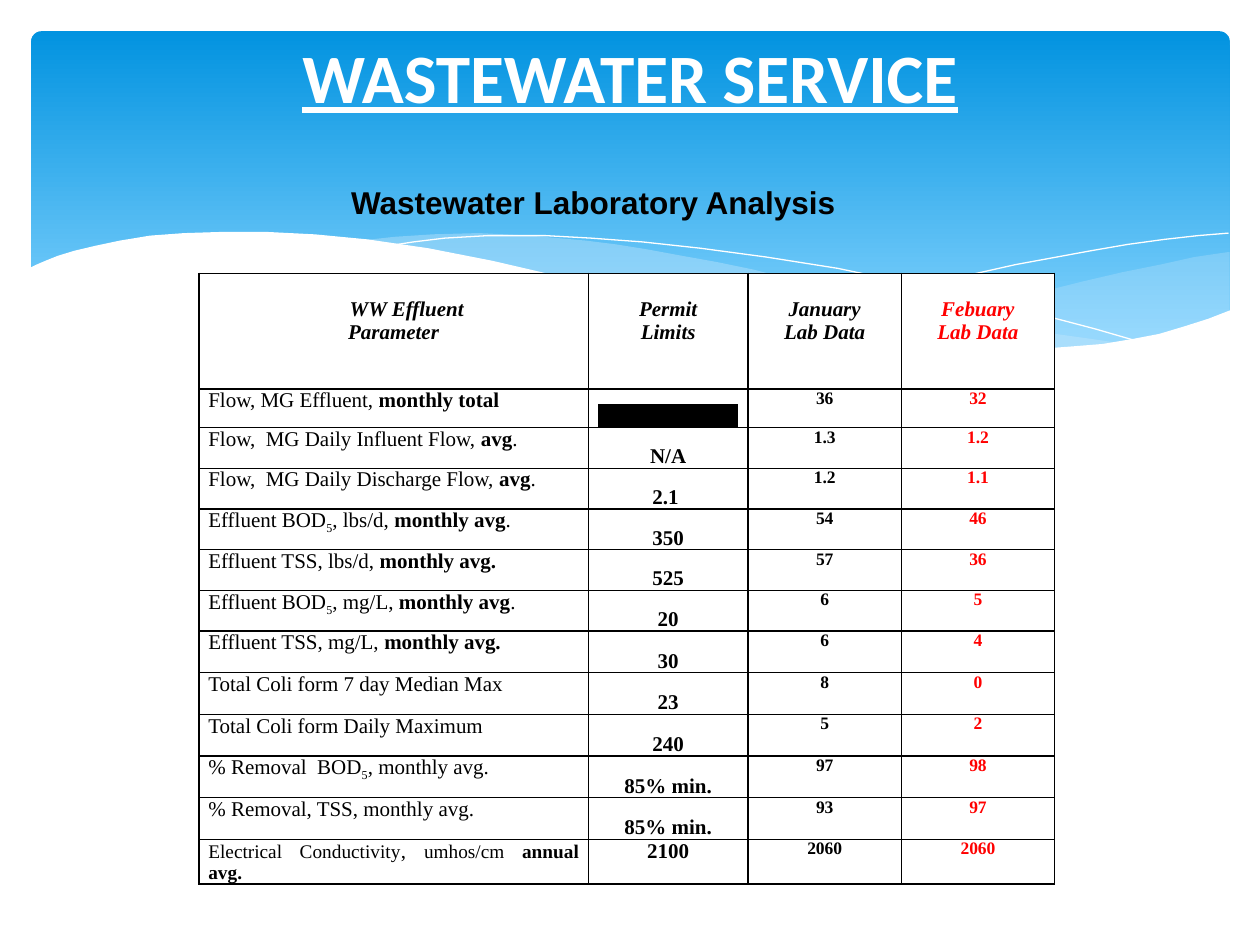
from lxml import etree
from pptx import Presentation
from pptx import util as u
from pptx.dml.color import RGBColor
from pptx.enum import shapes, text
from pptx.oxml.ns import qn

WHITE = RGBColor(0xFF, 0xFF, 0xFF)
BLACK = RGBColor(0x00, 0x00, 0x00)
RED = RGBColor(0xFF, 0x00, 0x00)
SKY_TOP = RGBColor(0x02, 0x93, 0xE0)
SKY_BOTTOM = RGBColor(0x83, 0xD3, 0xFE)
PALE_BLUE = RGBColor(0xC6, 0xE7, 0xFC)

CENTER, JUSTIFY = text.PP_ALIGN.CENTER, text.PP_ALIGN.JUSTIFY
TOP, BOTTOM = text.MSO_ANCHOR.TOP, text.MSO_ANCHOR.BOTTOM

# Wave outlines in hundredths of an inch
RIGHT_WAVE = [
    (975, 200), (948, 204), (921, 210), (891, 216), (861, 223), (805, 237),
    (753, 248), (706, 257), (661, 265), (691, 269), (719, 272), (745, 275),
    (769, 277), (803, 278), (835, 277), (863, 275), (889, 272), (913, 267),
    (935, 262), (949, 257), (963, 252), (976, 247), (976, 200)]
MIDDLE_WAVE = [
    (893, 273), (866, 269), (837, 265), (807, 260), (775, 254), (741, 247),
    (706, 240), (668, 231), (629, 222), (598, 214), (569, 208), (541, 203),
    (514, 198), (489, 194), (465, 191), (420, 187), (380, 185), (344, 186),
    (313, 188), (286, 191), (323, 196), (362, 203), (404, 211), (449, 222),
    (491, 232), (530, 240), (566, 248), (601, 255), (634, 261), (665, 266),
    (695, 270), (722, 274), (748, 276), (785, 278), (828, 278), (867, 276)]
FALLING_LINE = [
    (309, 195), (328, 192), (353, 189), (387, 187), (433, 187), (469, 189),
    (510, 192), (556, 197), (608, 204), (665, 213), (727, 226), (795, 241),
    (831, 251), (869, 261), (907, 272)]
RISING_LINE = [
    (613, 257), (653, 246), (695, 235), (748, 223), (806, 210), (866, 199),
    (895, 194), (924, 190), (951, 187), (975, 185)]
WHITE_WAVE = [
    (977, 246), (959, 253), (940, 259), (920, 265), (899, 269), (875, 273),
    (850, 275), (823, 277), (793, 276), (761, 275), (726, 272), (688, 268),
    (648, 262), (603, 254), (555, 245), (503, 233), (447, 220), (391, 207),
    (340, 197), (292, 190), (250, 186), (211, 184), (177, 184), (146, 185),
    (119, 187), (95, 191), (76, 195), (59, 199), (46, 203), (36, 207),
    (29, 210), (23, 213), (23, 329), (977, 329)]

PLAIN, BOLD, SUBSCRIPT = {}, {"bold": True}, {"baseline": -25000}
SMALL = {"size": u.Pt(11)}
AVERAGE = [("monthly avg", BOLD), (".", PLAIN)]


def bod(lead, unit):
    return [(lead + "BOD", PLAIN), ("5", SUBSCRIPT), (unit, PLAIN)]


# Label spans, permit limit, January, February
RESULTS = [
    ([("Flow, MG Effluent, ", PLAIN), ("monthly total", BOLD)], "-" * 20, "36", "32"),
    ([("Flow,  MG Daily Influent Flow, ", PLAIN), ("avg", BOLD), (".", PLAIN)],
     "N/A", "1.3", "1.2"),
    ([("Flow,  MG Daily Discharge Flow, ", PLAIN), ("avg", BOLD), (". ", PLAIN)],
     "2.1 ", "1.2", "1.1"),
    (bod("Effluent ", ", lbs/d, ") + AVERAGE, "350", "54", "46"),
    ([("Effluent TSS, lbs/d, ", PLAIN), ("monthly avg.", BOLD)], "525", "57", "36"),
    (bod("Effluent ", ", mg/L, ") + AVERAGE, "20", "6", "5"),
    ([("Effluent TSS, mg/L, ", PLAIN), ("monthly avg.", BOLD)], "30", "6", "4"),
    ([("Total Coli form 7 day Median Max", PLAIN)], "23", "8", "0"),
    ([("Total Coli form Daily Maximum", PLAIN)], "240", "5", "2"),
    (bod("% Removal  ", ", monthly avg."), "85% min.", "97", "98"),
    ([("% Removal, TSS, monthly avg.", PLAIN)], "85% min.", "93", "97"),
    ([("Electrical Conductivity", SMALL), (", ", PLAIN), ("umhos/cm ", SMALL),
      ("annual avg.", {**SMALL, **BOLD})], "2100", "2060", "2060"),
]
HEADINGS = [("WW Effluent", "Parameter"), ("Permit", "Limits"),
            ("January", "Lab Data"), ("Febuary", "Lab Data")]
COLUMN_WIDTHS = [7.85, 3.22, 3.09, 3.09]
ROW_HEIGHTS = [2.33, 0.78] + [0.82] * 5 + [0.84] * 6


def set_all(target, values):
    for name, value in values.items():
        setattr(target, name, value)


def add_span(para, words, color=BLACK, baseline=None, **font):
    span = para.add_run()
    span.text = words
    set_all(span.font, font)
    span.font.color.rgb = color
    if baseline:
        span.font._element.set("baseline", str(baseline))
    return span


def highlight(span, color):
    mark = etree.Element(qn("a:highlight"))
    etree.SubElement(mark, qn("a:srgbClr"), val=str(color))
    span.font._element.find(qn("a:solidFill")).addnext(mark)


def add_wave(slide, points, fill=None, opacity=100):
    """Draw a filled wave, or an open white hairline when no fill is given."""
    builder = slide.shapes.build_freeform(*points[0], scale=u.Cm(2.54) / 100)
    builder.add_line_segments(points[1:], close=fill is not None)
    wave = builder.convert_to_shape()
    wave.shadow.inherit = False
    if fill is None:
        wave.fill.background()
        wave.line.color.rgb = WHITE
        wave.line.width = u.Cm(0)
        return
    wave.fill.solid()
    wave.fill.fore_color.rgb = fill
    wave.line.fill.background()
    if opacity < 100:
        color = next(wave.element.spPr.iter(qn("a:srgbClr")))
        etree.SubElement(color, qn("a:alpha"), val=str(opacity * 1000))


def add_sky(slide):
    sky = slide.shapes.add_shape(shapes.MSO_SHAPE.ROUNDED_RECTANGLE,
                                 u.Cm(0.63), u.Cm(0.63), u.Cm(24.16), u.Cm(6.86))
    sky.adjustments[0] = 0.03
    sky.shadow.inherit = False
    sky.line.fill.background()
    sky.fill.gradient()
    sky.fill.gradient_angle = 270
    for stop, color, place in zip(sky.fill.gradient_stops, (SKY_TOP, SKY_BOTTOM), (0, 0.9)):
        stop.color.rgb = color
        stop.position = place


def format_cell(cell, anchor=TOP, margin_top=0):
    set_all(cell, {"vertical_anchor": anchor, "margin_left": u.Cm(0.19),
                   "margin_right": u.Cm(0.19), "margin_top": u.Cm(margin_top),
                   "margin_bottom": 0})
    properties = cell._tc.get_or_add_tcPr()
    for side in ("lnL", "lnR", "lnT", "lnB"):
        border = etree.SubElement(properties, qn("a:" + side), w=str(u.Pt(1)))
        paint = etree.SubElement(border, qn("a:solidFill"))
        etree.SubElement(paint, qn("a:srgbClr"), val=str(BLACK))
    cell.fill.solid()
    cell.fill.fore_color.rgb = WHITE


def fill_cell(cell, lines, align=CENTER, color=BLACK, **font):
    """Write lines, each a list of (words, style) spans, into a cell."""
    frame = cell.text_frame
    for index, spans in enumerate(lines):
        para = frame.add_paragraph() if index else frame.paragraphs[0]
        para.alignment = align
        for words, style in spans:
            add_span(para, words, color, **{"name": "Times New Roman", **font, **style})


def add_results_table(slide):
    table = slide.shapes.add_table(len(ROW_HEIGHTS), len(COLUMN_WIDTHS), u.Cm(4.01), u.Cm(5.51),
                                   u.Cm(sum(COLUMN_WIDTHS)), u.Cm(sum(ROW_HEIGHTS))).table
    for column, width in zip(table.columns, COLUMN_WIDTHS):
        column.width = u.Cm(width)
    for row, height in zip(table.rows, ROW_HEIGHTS):
        row.height = u.Cm(height)

    colors = (BLACK, BLACK, BLACK, RED)
    for index, (lines, color) in enumerate(zip(HEADINGS, colors)):
        cell = table.cell(0, index)
        format_cell(cell, margin_top=0.49)
        fill_cell(cell, [[(line, PLAIN)] for line in lines], color=color,
                  size=u.Pt(12), bold=True, italic=True)
    first = table.cell(0, 0).text_frame.paragraphs[0]
    first._p.get_or_add_pPr().set("marL", str(u.Cm(0.53)))

    for number, (label, *values) in enumerate(RESULTS, start=1):
        cell = table.cell(number, 0)
        format_cell(cell)
        fill_cell(cell, [label], JUSTIFY, size=u.Pt(12), bold=False)
        for index, value in enumerate(values, start=1):
            cell = table.cell(number, index)
            is_limit = index == 1
            format_cell(cell, BOTTOM if is_limit and number < len(RESULTS) else TOP)
            fill_cell(cell, [[(value, BOLD)]], color=colors[index],
                      size=u.Pt(12 if is_limit else 10))
    highlight(table.cell(1, 1).text_frame.paragraphs[0].runs[0], BLACK)


def format_title(slide):
    title = slide.shapes.title
    title.element.getparent().append(title.element)  # in front of the waves
    set_all(title, {"left": u.Cm(1.27), "top": u.Cm(0.94),
                    "width": u.Cm(22.86), "height": u.Cm(2.87)})
    set_all(title.text_frame, {"vertical_anchor": text.MSO_ANCHOR.MIDDLE, "word_wrap": True,
                               "auto_size": text.MSO_AUTO_SIZE.NONE,
                               "margin_bottom": u.Cm(1.83)})
    para = title.text_frame.paragraphs[0]
    para.alignment = CENTER
    add_span(para, "WASTEWATER SERVICE", WHITE, name="Calibri", size=u.Pt(39.6),
             bold=True, underline=True)


def add_subtitle(slide):
    box = slide.shapes.add_textbox(u.Cm(5.94), u.Cm(3.56), u.Cm(15.04), u.Cm(1.02))
    box.text_frame.word_wrap = True
    para = box.text_frame.paragraphs[0]
    para._p.get_or_add_pPr().set("indent", str(u.Cm(0.89)))
    add_span(para, "Wastewater Laboratory Analysis", name="Arial", size=u.Pt(18), bold=True)


def main():
    deck = Presentation()
    set_all(deck, {"slide_width": u.Cm(25.4), "slide_height": u.Cm(19.05)})
    slide = deck.slides.add_slide(deck.slide_layouts[5])
    add_sky(slide)
    add_wave(slide, RIGHT_WAVE, PALE_BLUE, 29)
    add_wave(slide, MIDDLE_WAVE, PALE_BLUE, 40)
    add_wave(slide, FALLING_LINE)
    add_wave(slide, RISING_LINE)
    add_wave(slide, WHITE_WAVE, WHITE)
    add_results_table(slide)
    format_title(slide)
    add_subtitle(slide)
    deck.save("out.pptx")


if __name__ == "__main__":
    main()
